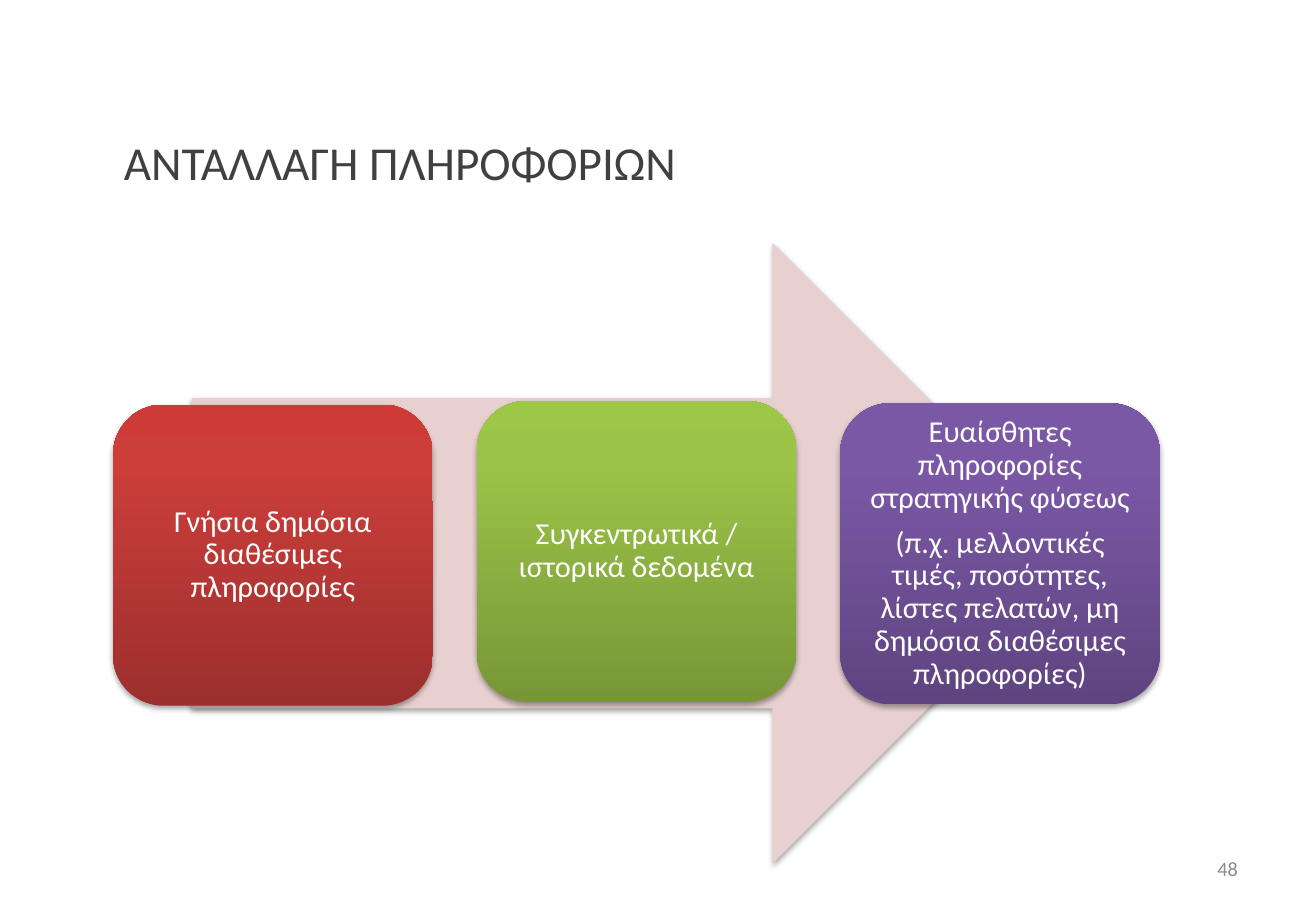
from lxml import etree
from pptx import Presentation
from pptx.dml.color import RGBColor
from pptx.enum.shapes import MSO_SHAPE
from pptx.enum.text import MSO_ANCHOR, PP_ALIGN
from pptx.oxml import parse_xml
from pptx.oxml.ns import nsdecls, qn
from pptx.util import Pt

ARROW, ROUNDED = MSO_SHAPE.RIGHT_ARROW, MSO_SHAPE.ROUNDED_RECTANGLE
LEFT, CENTER, RIGHT = PP_ALIGN.LEFT, PP_ALIGN.CENTER, PP_ALIGN.RIGHT
MIDDLE = MSO_ANCHOR.MIDDLE

WHITE = RGBColor(0xFF, 0xFF, 0xFF)
DARK = RGBColor(0x40, 0x40, 0x40)
GREY = RGBColor(0x8C, 0x8C, 0x8C)
PINK = RGBColor(0xE8, 0xD0, 0xD0)
RED = [RGBColor(0x9C, 0x2F, 0x2D), RGBColor(0xCB, 0x3E, 0x3A), RGBColor(0xCE, 0x3B, 0x37)]
GREEN = [RGBColor(0x77, 0x97, 0x37), RGBColor(0x9B, 0xC3, 0x48), RGBColor(0x9D, 0xC7, 0x46)]
PURPLE = [RGBColor(0x5F, 0x44, 0x80), RGBColor(0x7B, 0x58, 0xA6), RGBColor(0x7C, 0x57, 0xA8)]
STOPS = [0, 80, 100]

TITLE = "ΑΝΤΑΛΛΑΓΗ ΠΛΗΡΟΦΟΡΙΩΝ"
PAGE = "48"
STAGES = [
    (239.8, RED, ["Γνήσια δημόσια διαθέσιμες πληροφορίες"]),
    (237.6, GREEN, ["Συγκεντρωτικά / ιστορικά δεδομένα"]),
    (239, PURPLE, ["Ευαίσθητες πληροφορίες στρατηγικής φύσεως",
                   "(π.χ. μελλοντικές τιμές, ποσότητες, λίστες πελατών, "
                   "μη δημόσια διαθέσιμες πληροφορίες)"]),
]
STAGE_LEFT, STAGE_PITCH, STAGE_W, STAGE_H = 67, 215.5, 189.5, 178.5


def write(sp, paragraphs, size, color, align, inset=None, spacing=None, after=0):
    tf = sp.text_frame
    tf.word_wrap = True
    tf.vertical_anchor = MIDDLE
    if inset is not None:
        tf.margin_left = tf.margin_right = tf.margin_top = tf.margin_bottom = Pt(inset)
    for i, text in enumerate(paragraphs):
        p = tf.paragraphs[0] if i == 0 else tf.add_paragraph()
        p.alignment = align
        p.space_before = Pt(0)
        p.space_after = Pt(after)
        if spacing:
            p.line_spacing = spacing
        r = p.add_run()
        r.text = text
        r.font.name = "Calibri"
        r.font.size = Pt(size)
        r.font.color.rgb = color


def add_shadow(sp):
    sp.shadow.inherit = False
    effects = sp._element.spPr.find(qn("a:effectLst"))
    effects.append(parse_xml(
        f'<a:outerShdw {nsdecls("a")} blurRad="{Pt(3.1)}" dist="{Pt(1.8)}" '
        'dir="5400000" rotWithShape="0"><a:srgbClr val="000000">'
        '<a:alpha val="35000"/></a:srgbClr></a:outerShdw>'))


def add_gradient(sp, colors):
    sp.fill.gradient()
    sp.fill.gradient_angle = 90
    stops = sp._element.spPr.find(qn("a:gradFill")).find(qn("a:gsLst"))
    for old in list(stops):
        stops.remove(old)
    for position, color in zip(STOPS, colors):
        gs = etree.SubElement(stops, qn("a:gs"), pos=str(position * 1000))
        etree.SubElement(gs, qn("a:srgbClr"), val=str(color))


def add_block(slide, kind, left, top, width, height):
    sp = slide.shapes.add_shape(kind, Pt(left), Pt(top), Pt(width), Pt(height))
    sp.line.fill.background()
    add_shadow(sp)
    return sp


def main():
    prs = Presentation()
    prs.slide_width, prs.slide_height = Pt(780), Pt(540)
    slide = prs.slides.add_slide(prs.slide_layouts[5])

    title = slide.shapes.title
    title.left, title.top, title.width, title.height = Pt(66.2), Pt(61.2), Pt(690), Pt(69)
    write(title, [TITLE], 28, DARK, LEFT)

    arrow = add_block(slide, ARROW, 113.8, 144, 528, 368)
    arrow.fill.solid()
    arrow.fill.fore_color.rgb = PINK

    for i, (top, colors, paragraphs) in enumerate(STAGES):
        sp = add_block(slide, ROUNDED, STAGE_LEFT + i * STAGE_PITCH, top, STAGE_W, STAGE_H)
        add_gradient(sp, colors)
        write(sp, paragraphs, 18, WHITE, CENTER, inset=5, spacing=0.9, after=7)

    page = slide.shapes.add_textbox(Pt(558.7), Pt(500.4), Pt(182), Pt(28.8))
    write(page, [PAGE], 12, GREY, RIGHT)

    prs.save("out.pptx")


if __name__ == "__main__":
    main()
